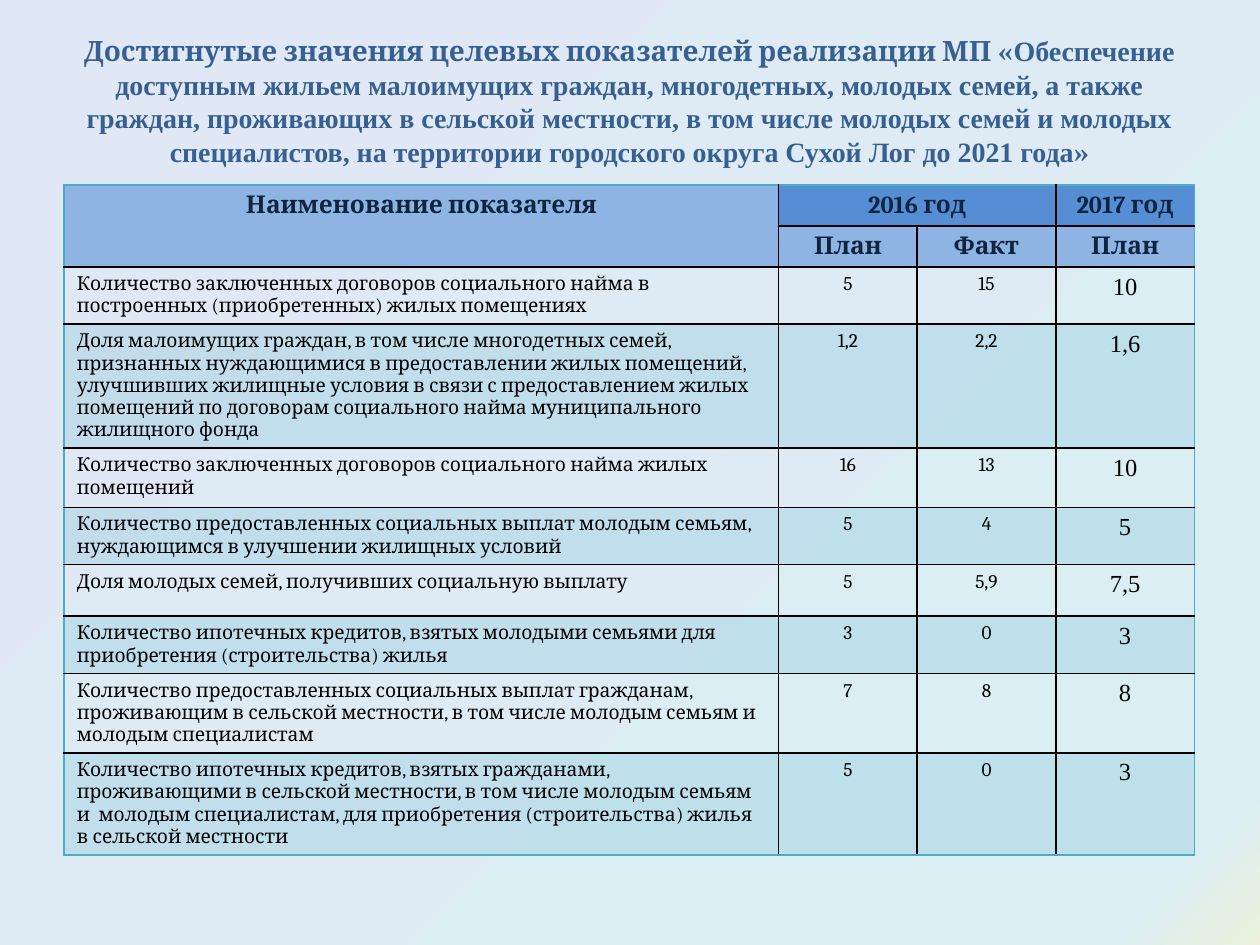
from copy import deepcopy
from lxml import etree
from pptx import Presentation
from pptx.dml.color import RGBColor
from pptx.enum.text import MSO_ANCHOR, MSO_AUTO_SIZE, PP_ALIGN
from pptx.oxml.ns import qn
from pptx.util import Inches, Pt

CENTER, LEFT = PP_ALIGN.CENTER, PP_ALIGN.LEFT
MIDDLE, NO_FIT = MSO_ANCHOR.MIDDLE, MSO_AUTO_SIZE.NONE
SERIF, TIMES = "Cambria", "Times New Roman"
BLACK = RGBColor(0x00, 0x00, 0x00)
NAVY = RGBColor(0x0F, 0x24, 0x3E)
TITLE_BLUE = RGBColor(0x37, 0x60, 0x92)
YEAR_BLUE = RGBColor(0x55, 0x8E, 0xD5)
HEAD_BLUE = RGBColor(0x8E, 0xB4, 0xE3)
TEAL = RGBColor(0x4B, 0xAC, 0xC6)
BACKGROUND = [
    (0, RGBColor(0xEB, 0xF1, 0xDE)),
    (0.08, RGBColor(0xDB, 0xEE, 0xF4)),
    (1, RGBColor(0xE1, 0xE8, 0xF5)),
]

TITLE = [
    ("Достигнутые значения целевых показателей реализации МП «", SERIF),
    ("Обеспечение доступным жильем малоимущих граждан, многодетных, молодых семей, "
     "а также граждан, проживающих в сельской местности, в том числе молодых семей "
     "и молодых специалистов, на территории городского округа Сухой Лог до 2021 года", TIMES),
    ("»", SERIF),
]
HEADER = [
    ("Наименование показателя", "2016 год", "", "2017 год"),
    ("", "План", "Факт", "План"),
]
INDICATORS = [
    ("Количество заключенных договоров социального найма в построенных "
     "(приобретенных) жилых помещениях", "5", "15", "10"),
    ("Доля малоимущих граждан, в том числе многодетных семей, признанных нуждающимися "
     "в предоставлении жилых помещений, улучшивших жилищные условия в связи с "
     "предоставлением жилых помещений по договорам социального найма муниципального "
     "жилищного фонда", "1,2", "2,2", "1,6"),
    ("Количество заключенных договоров социального найма жилых помещений", "16", "13", "10"),
    ("Количество предоставленных социальных выплат молодым семьям, нуждающимся в "
     "улучшении жилищных условий", "5", "4", "5"),
    ("Доля молодых семей, получивших социальную выплату", "5", "5,9", "7,5"),
    ("Количество ипотечных кредитов, взятых молодыми семьями для приобретения "
     "(строительства) жилья", "3", "0", "3"),
    ("Количество предоставленных социальных выплат гражданам, проживающим в сельской "
     "местности, в том числе молодым семьям и молодым специалистам", "7", "8", "8"),
    ("Количество ипотечных кредитов, взятых гражданами, проживающими в сельской "
     "местности, в том числе молодым семьям и  молодым специалистам, для приобретения "
     "(строительства) жилья в сельской местности", "5", "0", "3"),
]
COL_WIDTHS = [5.67, 1.1, 1.1, 1.1]
ROW_HEIGHTS = [0.32, 0.32, 0.45, 0.98, 0.47, 0.45, 0.41, 0.45, 0.63, 0.81]


def add_text(p, text, size=11, font=SERIF, color=BLACK, bold=False, align=LEFT):
    p.alignment = align
    r = p.add_run()
    r.text = text
    r.font.size, r.font.name, r.font.bold = Pt(size), font, bold
    r.font.color.rgb = color


def set_fill(cell, color, alpha=None):
    if color is None:
        cell.fill.background()
        return
    cell.fill.solid()
    cell.fill.fore_color.rgb = color
    if alpha:
        clr = cell.fill._xPr.find(".//" + qn("a:srgbClr"))
        etree.SubElement(clr, qn("a:alpha"), val=str(alpha * 1000))


def set_borders(cell, colors):
    tcPr = cell._tc.get_or_add_tcPr()
    for i, (side, color) in enumerate(zip("LRTB", colors)):
        ln = etree.Element(qn(f"a:ln{side}"), w=str(Pt(1)))
        fill = etree.SubElement(ln, qn("a:solidFill"))
        etree.SubElement(fill, qn("a:srgbClr"), val=str(color))
        tcPr.insert(i, ln)


def set_background(s):
    fill = s.background.fill
    fill.gradient()
    fill.gradient_angle = 135
    stops = s.element.find(".//" + qn("a:gsLst"))
    stops.append(deepcopy(stops[0]))
    for stop, (position, color) in zip(fill.gradient_stops, BACKGROUND):
        stop.position = position
        stop.color.rgb = color


def add_title(s):
    sp = s.shapes.title
    sp.left, sp.top, sp.width, sp.height = map(Inches, (0.43, 0.21, 9.13, 1.18))
    tf = sp.text_frame
    tf.auto_size, tf.vertical_anchor, tf.word_wrap = NO_FIT, MIDDLE, True
    for text, font in TITLE:
        add_text(tf.paragraphs[0], text, size=16, font=font, color=TITLE_BLUE,
                 bold=True, align=CENTER)


def add_indicator_table(s):
    rows = HEADER + INDICATORS
    last_row, last_col = len(rows) - 1, len(COL_WIDTHS) - 1
    table = s.shapes.add_table(len(rows), len(COL_WIDTHS), Inches(0.51), Inches(1.47),
                               Inches(sum(COL_WIDTHS)), Inches(sum(ROW_HEIGHTS))).table
    table.first_row = table.horz_banding = False
    for col, width in zip(table.columns, COL_WIDTHS):
        col.width = Inches(width)
    for row, height in zip(table.rows, ROW_HEIGHTS):
        row.height = Inches(height)
    table.cell(0, 0).merge(table.cell(1, 0))
    table.cell(0, 1).merge(table.cell(0, 2))

    for i, row in enumerate(rows):
        for j, text in enumerate(row):
            cell = table.cell(i, j)
            if i < len(HEADER):
                style = dict(size=14, color=NAVY, bold=True, align=CENTER)
                set_fill(cell, YEAR_BLUE if i == 0 and j > 0 else HEAD_BLUE)
            else:
                style = dict(align=CENTER if j else LEFT)
                if j == last_col:
                    style.update(size=14, font=TIMES)
                set_fill(cell, TEAL if i % 2 else None, alpha=20)
            if text:
                add_text(cell.text_frame.paragraphs[0], text, **style)
            outer = (j == 0, j == last_col, i == 0, i == last_row)
            set_borders(cell, [TEAL if edge else BLACK for edge in outer])


def main():
    prs = Presentation()
    prs.slide_width, prs.slide_height = Inches(10), Inches(7.5)
    s = prs.slides.add_slide(prs.slide_layouts[5])
    set_background(s)
    add_title(s)
    add_indicator_table(s)
    prs.save("out.pptx")


if __name__ == "__main__":
    main()
